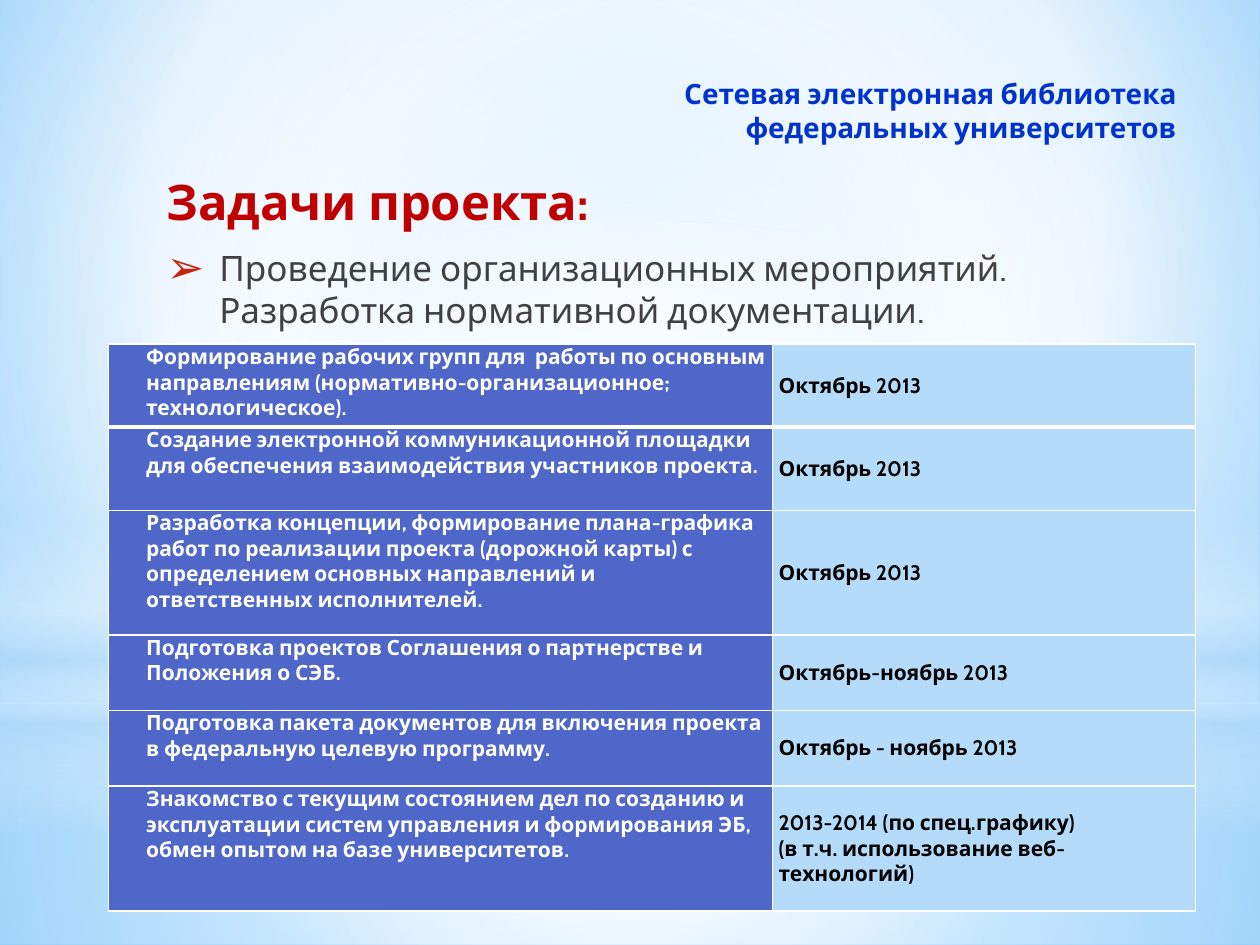
from dataclasses import dataclass
from typing import Any, Optional

import lxml.etree
import pptx
import pptx.dml.color
import pptx.enum.shapes
import pptx.enum.text
import pptx.oxml
import pptx.oxml.ns
import pptx.util

Inches = pptx.util.Inches
Pt = pptx.util.Pt
qn = pptx.oxml.ns.qn
SHAPE = pptx.enum.shapes.MSO_SHAPE
ALIGN = pptx.enum.text.PP_ALIGN
ANCHOR = pptx.enum.text.MSO_ANCHOR

FONT = "Cabin"
WHITE = "FFFFFF"
SKY = "B4DCFA"
INDIGO = "4E67C8"
CENTRE = (50, 50, 50, 50)


@dataclass(frozen=True)
class Stop:
    position: int
    color: str
    opacity: int = 100


@dataclass(frozen=True)
class Glow:
    outline: Any
    box: tuple[float, float, float, float]
    stops: tuple[Stop, ...]
    focus: Optional[tuple[int, int, int, int]] = CENTRE


@dataclass(frozen=True)
class Task:
    description: str
    term: str
    height: float


SKY_STOPS = (Stop(0, "9ED5FF"), Stop(60, WHITE), Stop(100, "5BB9FF"))

GLOWS = (
    Glow(SHAPE.RECTANGLE, (0, 5.58, 10, 1.92),
         (Stop(0, WHITE, 91), Stop(37, WHITE, 76), Stop(100, SKY, 79))),
    Glow(SHAPE.RECTANGLE, (0, 0, 10, 5.58),
         (Stop(0, WHITE, 89), Stop(48, WHITE, 62), Stop(100, SKY, 79))),
    Glow(SHAPE.RECTANGLE, (0, 4.12, 10, 2.5),
         (Stop(0, WHITE, 0), Stop(29, WHITE, 30), Stop(45, SKY, 40),
          Stop(55, WHITE, 26), Stop(65, SKY, 60), Stop(100, WHITE, 0)), None),
    Glow(SHAPE.OVAL, (0, 1.75, 10, 5.58), (Stop(0, WHITE), Stop(56, WHITE, 0))),
)

TASKS = (
    Task("Формирование рабочих групп для  работы по основным направлениям "
         "(нормативно-организационное; технологическое).", "Октябрь 2013", 0.66),
    Task("Создание электронной коммуникационной площадки для обеспечения "
         "взаимодействия участников проекта.", "Октябрь 2013", 0.66),
    Task("Разработка концепции, формирование плана-графика работ по реализации "
         "проекта (дорожной карты) с определением основных направлений и "
         "ответственных исполнителей.", "Октябрь 2013", 0.99),
    Task("Подготовка проектов Соглашения о партнерстве и Положения о СЭБ.",
         "Октябрь-ноябрь 2013", 0.6),
    Task("Подготовка пакета документов для включения проекта в федеральную "
         "целевую программу.", "Октябрь - ноябрь 2013", 0.6),
    Task("Знакомство с текущим состоянием дел по созданию и эксплуатации систем "
         "управления и формирования ЭБ, обмен опытом на базе университетов.",
         "2013-2014 (по спец.графику)\v(в т.ч. использование веб-технологий)", 0.99),
)


def color(value: str) -> pptx.dml.color.RGBColor:
    return pptx.dml.color.RGBColor.from_string(value)


def apply(target: Any, values: dict[str, Any]) -> None:
    for name, value in values.items():
        setattr(target, name, value)


def add_xml(parent: Any, tag: str, **attributes: Any) -> Any:
    return lxml.etree.SubElement(
        parent, qn(tag), {name: str(value) for name, value in attributes.items()})


def paint_gradient(owner: Any, properties: Any, stops: tuple[Stop, ...],
                   focus: Optional[tuple[int, int, int, int]]) -> None:
    owner.fill.gradient()
    gradient = properties.find(qn("a:gradFill"))
    for child in list(gradient):
        gradient.remove(child)
    stop_list = add_xml(gradient, "a:gsLst")
    for stop in stops:
        tint = add_xml(add_xml(stop_list, "a:gs", pos=stop.position * 1000),
                       "a:srgbClr", val=stop.color)
        if stop.opacity < 100:
            add_xml(tint, "a:alpha", val=stop.opacity * 1000)
    if focus is None:
        add_xml(gradient, "a:lin", ang=5400000, scaled=0)
    else:
        sides = {side: share * 1000 for side, share in zip("ltrb", focus)}
        add_xml(add_xml(gradient, "a:path", path="circle"), "a:fillToRect", **sides)


def draw_glow(slide: Any, glow: Glow, depth: int) -> None:
    shape = slide.shapes.add_shape(glow.outline, *map(Inches, glow.box))
    shape.shadow.inherit = False
    shape.line.fill.background()
    paint_gradient(shape, shape.element.spPr, glow.stops, glow.focus)
    slide.shapes.element.insert(2 + depth, shape.element)


def place(placeholder: Any, left: float, top: float, width: float, height: float) -> None:
    apply(placeholder, {"left": Inches(left), "top": Inches(top),
                        "width": Inches(width), "height": Inches(height)})


def write(paragraph: Any, text: str, size: int, ink: str, bold: bool = True) -> None:
    paragraph.text = text
    for run in paragraph.runs:
        apply(run.font, {"name": FONT, "size": Pt(size), "bold": bold})
        run.font.color.rgb = color(ink)


def indent(paragraph: Any, left: float, first: float = 0) -> Any:
    properties = paragraph._p.get_or_add_pPr()
    properties.set("marL", str(Inches(left)))
    properties.set("indent", str(Inches(first)))
    return properties


def draw_borders(cell: Any, widths: dict[str, int]) -> None:
    properties = cell._tc.get_or_add_tcPr()
    for position, (side, width) in enumerate(widths.items()):
        border = add_xml(properties, f"a:ln{side}", w=Pt(width))
        add_xml(add_xml(border, "a:solidFill"), "a:srgbClr", val=WHITE)
        properties.insert(position, border)


def fill_cell(cell: Any, text: str, ink: str, background: str, anchor: Any) -> None:
    apply(cell, {"margin_left": Inches(0.05), "margin_right": Inches(0.05),
                 "margin_top": 0, "margin_bottom": 0, "vertical_anchor": anchor})
    write(cell.text_frame.paragraphs[0], text, 12, ink)
    cell.fill.solid()
    cell.fill.fore_color.rgb = color(background)


def draw_schedule(slide: Any, tasks: tuple[Task, ...]) -> None:
    total = sum(task.height for task in tasks)
    schedule = slide.shapes.add_table(
        len(tasks), 2, Inches(0.86), Inches(2.73), Inches(8.63), Inches(total)).table
    for column, width in zip(schedule.columns, (5.27, 3.36)):
        column.width = Inches(width)
    for index, task in enumerate(tasks):
        schedule.rows[index].height = Inches(task.height)
        description, term = schedule.cell(index, 0), schedule.cell(index, 1)
        fill_cell(description, task.description, WHITE, INDIGO, ANCHOR.TOP)
        indent(description.text_frame.paragraphs[0], 0.25)
        fill_cell(term, task.term, "000000", SKY, ANCHOR.MIDDLE)
        for cell in (description, term):
            draw_borders(cell, {"L": 1, "R": 1, "T": 3 if index == 1 else 1,
                                "B": 3 if index == 0 else 1})


def main() -> None:
    deck = pptx.Presentation()
    apply(deck, {"slide_width": Inches(10), "slide_height": Inches(7.5)})
    slide = deck.slides.add_slide(deck.slide_layouts[1])
    background = slide.background
    background.fill.gradient()
    paint_gradient(background, slide.element.cSld.bg.bgPr, SKY_STOPS, (20, 10, 20, 60))
    for depth, glow in enumerate(GLOWS):
        draw_glow(slide, glow, depth)

    library = slide.shapes.title
    place(library, 2.32, 0.52, 7.12, 0.71)
    library_name = library.text_frame.paragraphs[0]
    write(library_name, "Сетевая электронная библиотека\vфедеральных университетов",
          16, "0033CC")
    library_name.alignment = ALIGN.RIGHT

    goals = slide.placeholders[1]
    place(goals, 1.17, 1.31, 7.97, 5.28)
    heading = goals.text_frame.paragraphs[0]
    write(heading, "Задачи проекта:", 28, "C00000")
    activity = goals.text_frame.add_paragraph()
    write(activity, "Проведение организационных мероприятий.\v"
                    "Разработка нормативной документации.", 20, "404040", False)
    for paragraph in (heading, activity):
        paragraph.space_after = Pt(3)
    add_xml(indent(heading, 0.05), "a:buNone")
    bullet = indent(activity, 0.47, -0.42)
    add_xml(add_xml(bullet, "a:buClr"), "a:srgbClr", val="C3260C")
    add_xml(bullet, "a:buSzPct", val=130000)
    add_xml(bullet, "a:buChar", char="➢")

    draw_schedule(slide, TASKS)
    deck.save("out.pptx")


if __name__ == "__main__":
    main()
